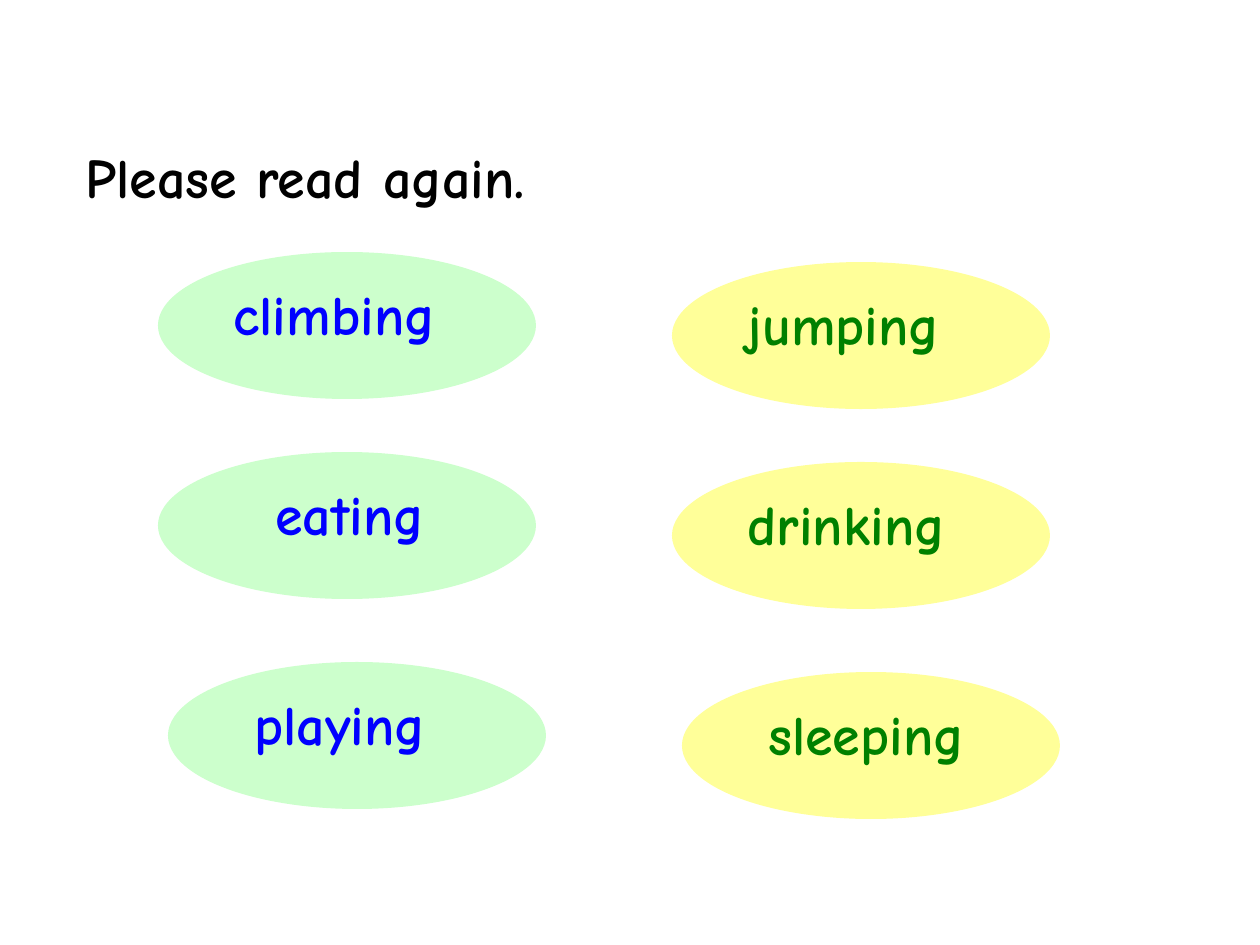
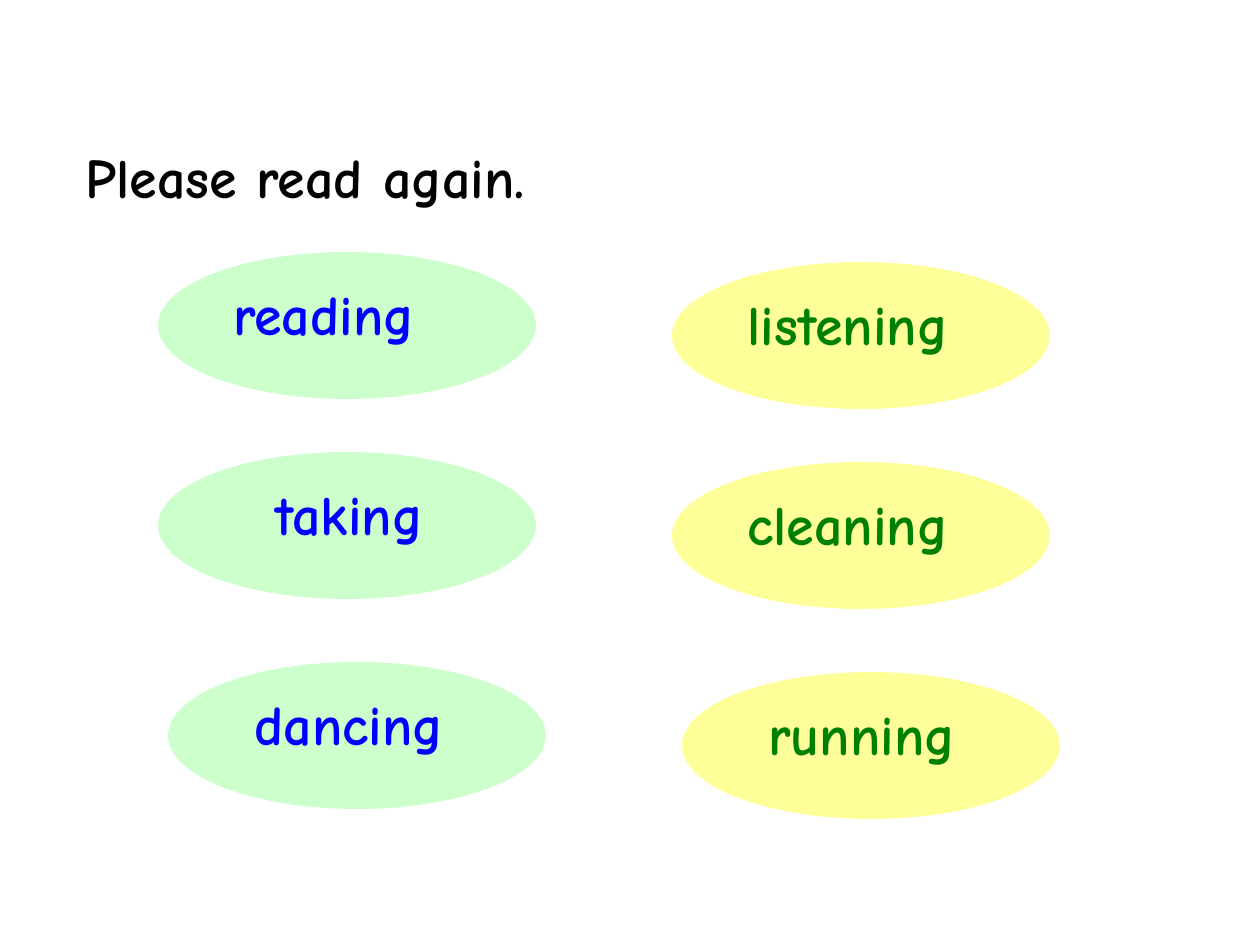
from pptx import Presentation
from pptx import util as u
from pptx.dml.color import RGBColor
from pptx.enum import shapes, text

TITLE = "Please read again."
SLIDES = [
    (("climbing", "eating", "playing"), ("jumping", "drinking", "sleeping")),
    (("reading", "taking", "dancing"), ("listening", "cleaning", "running")),
]
COLUMNS = [
    {"shift": (0, 0), "fill": "CCFFCC", "font": "0000FF",
     "indents": (63, 105, 74), "widths": (273, 210, 242)},
    {"shift": (514, 10), "fill": "FFFF99", "font": "008000",
     "indents": (63, 63, 74), "widths": (273, 284, 284)},
]
OVAL_ORIGINS = [(158, 252), (158, 452), (168, 662)]
OVAL_SIZE = (378, 147)
WORD_DROP = 21
WORD_HEIGHT = 81
TITLE_BOX = (73, 136, 514, WORD_HEIGHT)
FONT = "Comic Neue"
FONT_SIZE = 32
PX = u.Inches(1) / 126


def px(*lengths):
    return [u.Emu(round(length * PX)) for length in lengths]


def color(value):
    return RGBColor.from_string(value)


def write(shape, words, font_color):
    frame = shape.text_frame
    frame.text = words
    frame.word_wrap = True
    frame.auto_size = text.MSO_AUTO_SIZE.SHAPE_TO_FIT_TEXT
    frame.vertical_anchor = text.MSO_ANCHOR.TOP
    paragraph = frame.paragraphs[0]
    paragraph.alignment = text.PP_ALIGN.LEFT
    paragraph.font.name = FONT
    paragraph.font.size = u.Pt(FONT_SIZE)
    paragraph.font.bold = True
    paragraph.font.color.rgb = color(font_color)


def add_title(slide):
    title = slide.shapes.title
    title.left, title.top, title.width, title.height = px(*TITLE_BOX)
    write(title, TITLE, "000000")


def add_column(slide, words, column):
    shift_x, shift_y = column["shift"]
    rows = zip(words, OVAL_ORIGINS, column["indents"], column["widths"])
    for word, (x, y), indent, width in rows:
        left, top = x + shift_x, y + shift_y
        oval = slide.shapes.add_shape(shapes.MSO_SHAPE.OVAL, *px(left, top, *OVAL_SIZE))
        oval.shadow.inherit = False
        oval.fill.solid()
        oval.fill.fore_color.rgb = color(column["fill"])
        oval.line.fill.background()
        label = slide.shapes.add_textbox(
            *px(left + indent, top + WORD_DROP, width, WORD_HEIGHT))
        write(label, word, column["font"])


def main():
    presentation = Presentation()
    presentation.slide_width, presentation.slide_height = px(1260, 945)
    title_only = presentation.slide_layouts[5]
    for word_columns in SLIDES:
        slide = presentation.slides.add_slide(title_only)
        add_title(slide)
        for words, column in zip(word_columns, COLUMNS):
            add_column(slide, words, column)
    presentation.save("out.pptx")


if __name__ == "__main__":
    main()
